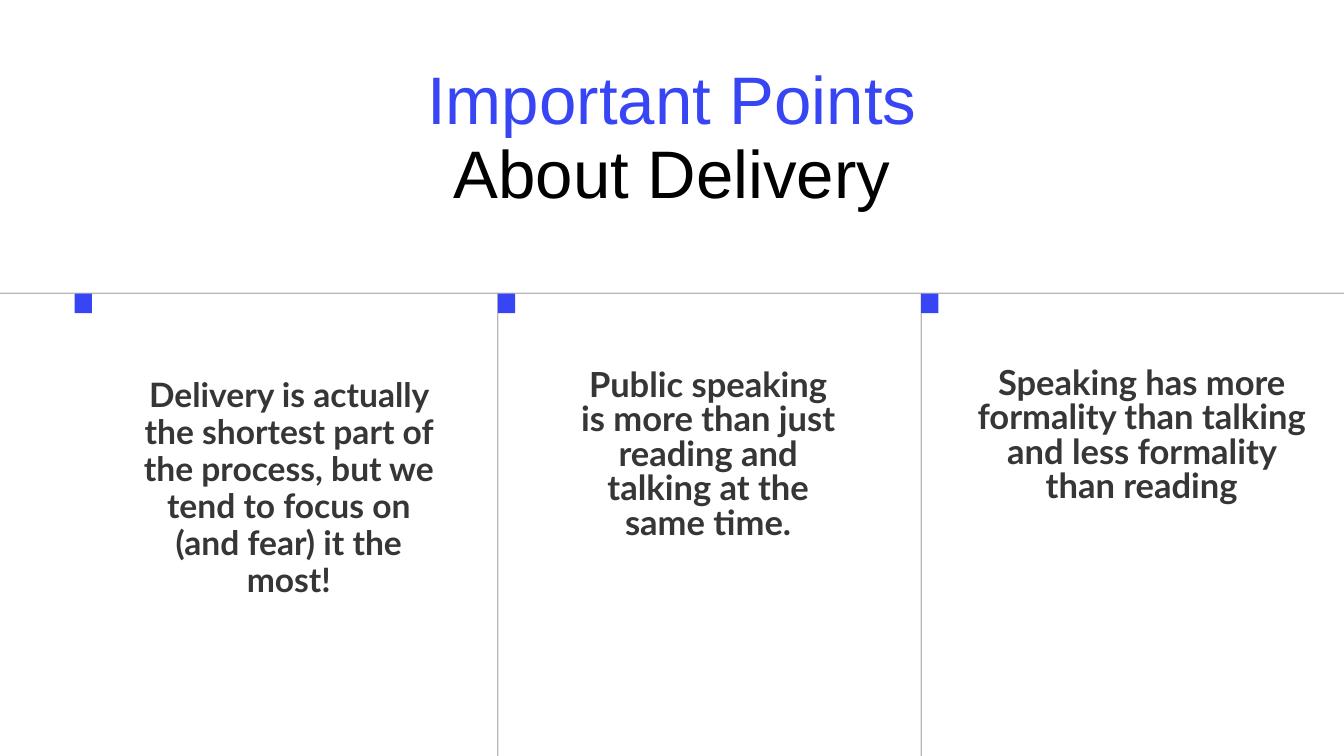
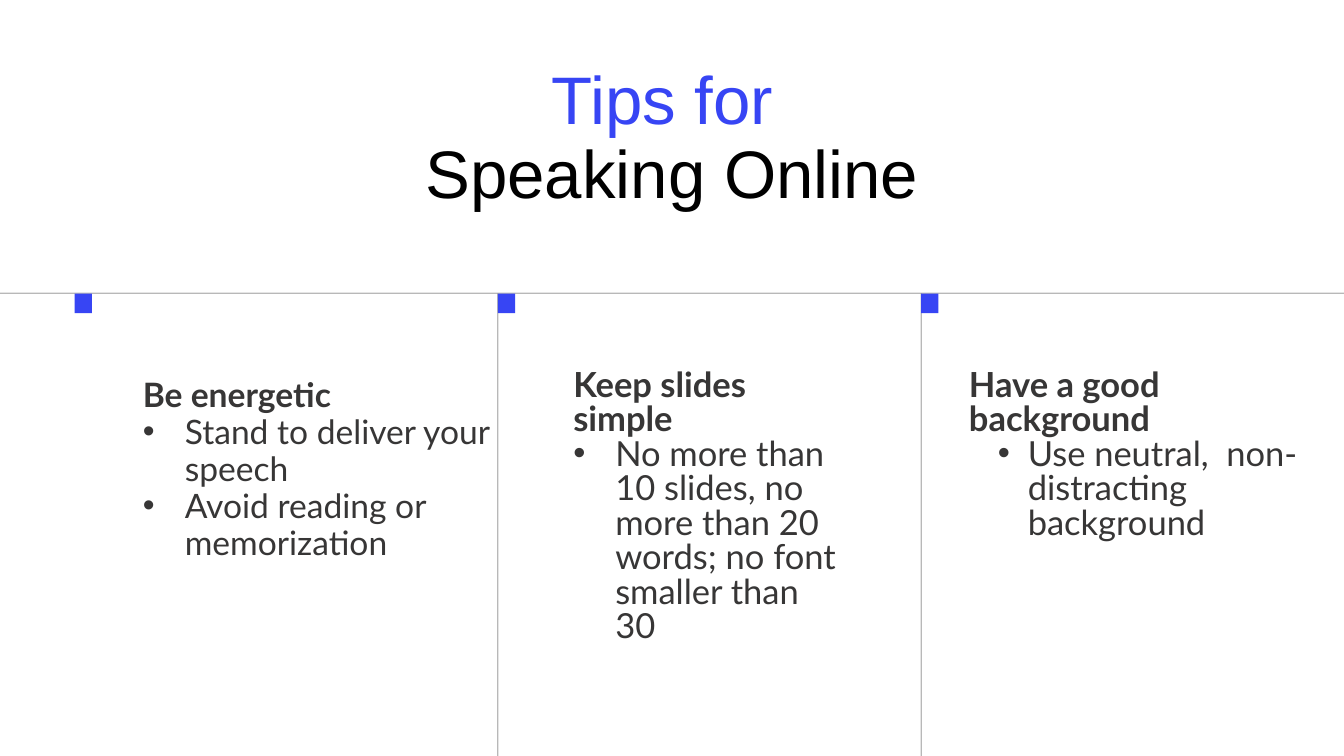
from collections import namedtuple

from lxml import etree
from pptx import Presentation
from pptx.dml.color import RGBColor
from pptx.enum import shapes, text
from pptx.oxml.ns import qn
from pptx.util import Pt

COLORS = {"accent": "3745F4", "title": "000000", "ink": "373636", "paper": "FFFFFF"}
WIDTH, HEIGHT = 1440, 810
RULE = 0.72
PANEL_TOP = 314.5
COLUMN_LEFT, COLUMN_STEP = 80, 453.5
TITLE_BOX = (276, 69, 888, 160)

# Offsets are measured from the column's marker; lengths are in points
Column = namedtuple("Column", "dx dy width height size spacing lines")
# A line is its text, left margin, hanging indent (0 = bold, no bullet) and level
Line = namedtuple("Line", "words margin hang level", defaults=(0, 0, 0))

SLIDES = [
    (("Important Points", "About Delivery"), text.PP_ALIGN.CENTER, [
        Column(43, 89.5, 343, 323, 36, 39.6, [
            Line("Delivery is actually the shortest part of the process, "
                 "but we tend to focus on (and fear) it the most!", 30, 0, 1)]),
        Column(80.7, 81.5, 289, 224, 37, 37, [
            Line("Public speaking is more than just reading and talking at the same time.")]),
        Column(57, 79.5, 358.5, 186, 37, 37, [
            Line("Speaking has more formality than talking and less formality than reading")]),
    ]),
    (("Tips for ", "Speaking Online"), text.PP_ALIGN.LEFT, [
        Column(43, 89.5, 409, 243, 36, 39.6, [
            Line("Be energetic", 30, 0, 1),
            Line("Stand to deliver your speech", 75, 45, 1),
            Line("Avoid reading or memorization", 75, 45, 1)]),
        Column(80.7, 81.5, 289, 299, 37, 37, [
            Line("Keep slides simple"),
            Line("No more than 10 slides, no more than 20 words; "
                 "no font smaller than 30", 45, 45)]),
        Column(51.2, 81.5, 358.5, 186, 37, 37, [
            Line("Have a good background"),
            Line("Use neutral,  non-distracting background", 63, 32, 1)]),
    ]),
]


def color(name):
    return RGBColor.from_string(COLORS[name])


def add_block(page, left, top, width, height, fill):
    block = page.shapes.add_shape(shapes.MSO_SHAPE.RECTANGLE,
                                  Pt(left), Pt(top), Pt(width), Pt(height))
    block.shadow.inherit = False
    block.fill.solid()
    block.fill.fore_color.rgb = color(fill)
    block.line.fill.background()


def prepare_frame(frame):
    frame.margin_left = frame.margin_top = frame.margin_right = frame.margin_bottom = 0
    frame.word_wrap = True
    frame.vertical_anchor = text.MSO_ANCHOR.TOP
    frame.auto_size = text.MSO_AUTO_SIZE.SHAPE_TO_FIT_TEXT


def format_paragraph(para, align, spacing):
    para.alignment = align
    para.line_spacing = Pt(spacing)
    para.space_before = para.space_after = Pt(0)


def format_span(span, face, size, fill, bold=False):
    span.font.name = face
    span.font.size = Pt(size)
    span.font.bold = bold
    span.font.color.rgb = color(fill)


def set_indent(para, line):
    para.level = line.level
    properties = para._p.get_or_add_pPr()
    properties.set("marL", str(Pt(line.margin)))
    properties.set("indent", str(-Pt(line.hang)))
    if line.hang:
        etree.SubElement(properties, qn("a:buFont"), typeface="Arial")
        etree.SubElement(properties, qn("a:buChar"), char="•")


def add_title(page, lines, box):
    title = page.shapes.title
    title.left, title.top, title.width, title.height = map(Pt, box)
    frame = title.text_frame
    frame.text = "\v".join(lines)
    prepare_frame(frame)
    para = frame.paragraphs[0]
    format_paragraph(para, text.PP_ALIGN.CENTER, 79.2)
    for span, fill in zip(para.runs, ("accent", "title")):
        format_span(span, "Arial", 72, fill)


def add_grid(page, top):
    """Draw the rule under the title, the column dividers and their markers."""
    lefts = [COLUMN_LEFT + i * COLUMN_STEP for i in range(3)]
    add_block(page, 0, top - RULE, WIDTH, RULE, "ink")
    for left in lefts[1:]:
        add_block(page, left - RULE / 2, top, RULE, HEIGHT - top, "ink")
    for left in lefts:
        add_block(page, left, top, 18.5, 21, "accent")
    return lefts


def add_column(page, left, top, column, align):
    box = page.shapes.add_textbox(Pt(left + column.dx), Pt(top + column.dy),
                                  Pt(column.width), Pt(column.height))
    frame = box.text_frame
    frame.text = "\n".join(line.words for line in column.lines)
    prepare_frame(frame)
    for para, line in zip(frame.paragraphs, column.lines):
        set_indent(para, line)
        format_paragraph(para, align, column.spacing)
        format_span(para.runs[0], "Lato", column.size, "ink", bold=not line.hang)


def add_page(deck, title, align, columns):
    page = deck.slides.add_slide(deck.slide_layouts[5])
    page.background.fill.solid()
    page.background.fill.fore_color.rgb = color("paper")
    add_title(page, title, TITLE_BOX)
    lefts = add_grid(page, PANEL_TOP)
    for left, column in zip(lefts, columns):
        add_column(page, left, PANEL_TOP, column, align)


def main():
    deck = Presentation()
    deck.slide_width, deck.slide_height = Pt(WIDTH), Pt(HEIGHT)
    for title, align, columns in SLIDES:
        add_page(deck, title, align, columns)
    deck.save("out.pptx")


if __name__ == "__main__":
    main()
